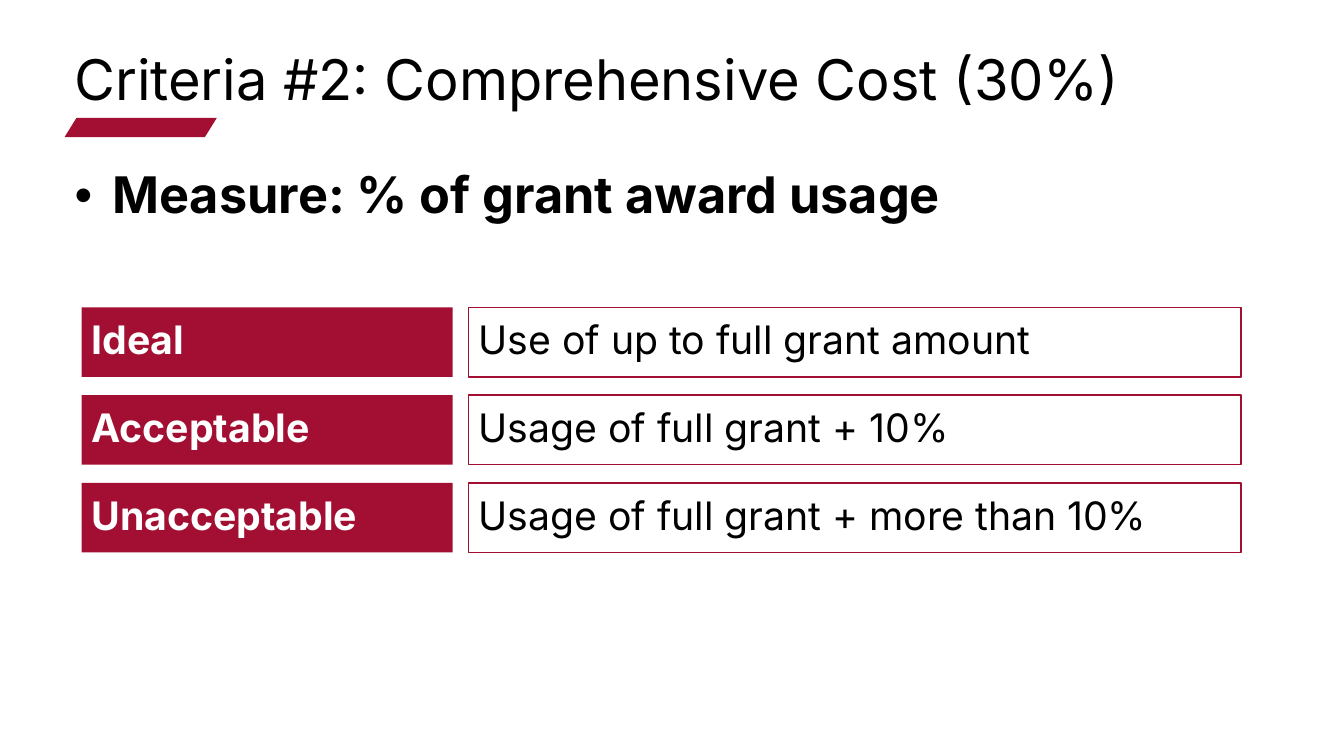
import pptx
import pptx.dml.color
import pptx.enum.shapes
import pptx.enum.text
import pptx.oxml
import pptx.oxml.ns
import pptx.util
from dataclasses import dataclass

Inches = pptx.util.Inches
Kind = pptx.enum.shapes.MSO_SHAPE
Anchor = pptx.enum.text.MSO_ANCHOR


@dataclass
class Theme:
    font: str = "Inter"
    red: str = "A30F32"
    white: str = "FFFFFF"
    black: str = "000000"
    title: int = 40
    measure: int = 36
    row: int = 28


class Deck:
    def __init__(self, theme):
        self.theme = theme
        self.show = pptx.Presentation()
        self.show.slide_width = Inches(13.33)
        self.show.slide_height = Inches(7.5)
        self.slide = self.show.slides.add_slide(self.show.slide_layouts[1])

    def color(self, code):
        return pptx.dml.color.RGBColor.from_string(code)

    def apply(self, item, form):
        for name, value in form.items():
            setattr(item, name, value)

    def label(self, shape, text, size, color, bold=False, anchor=Anchor.TOP):
        frame = shape.text_frame
        frame.text = text
        self.apply(frame, {
            "word_wrap": True,
            "auto_size": pptx.enum.text.MSO_AUTO_SIZE.NONE,
            "vertical_anchor": anchor,
            "margin_left": Inches(0.1),
            "margin_right": Inches(0.1),
            "margin_top": Inches(0.05),
            "margin_bottom": Inches(0.05),
        })
        para = frame.paragraphs[0]
        self.apply(para, {
            "alignment": pptx.enum.text.PP_ALIGN.LEFT,
            "line_spacing": 0.9,
            "space_before": pptx.util.Pt(0),
        })
        font = para.runs[0].font
        self.apply(font, {
            "name": self.theme.font,
            "size": pptx.util.Pt(size),
            "bold": bold,
        })
        font.color.rgb = self.color(color)

    def place(self, shape, left, top, width, height):
        self.apply(shape, {
            "left": Inches(left),
            "top": Inches(top),
            "width": Inches(width),
            "height": Inches(height),
        })

    def title(self, text, *box):
        shape = self.slide.shapes.title
        self.place(shape, *box)
        self.label(shape, text, self.theme.title, self.theme.black)

    def body(self, text, *box):
        shape = self.slide.placeholders[1]
        self.place(shape, *box)
        props = shape.text_frame.paragraphs[0]._p.get_or_add_pPr()
        props.set("marL", "0")
        props.set("indent", "0")
        props.append(pptx.oxml.parse_xml(
            f"<a:buNone {pptx.oxml.ns.nsdecls('a')}/>"))
        self.label(shape, text, self.theme.measure, self.theme.black, True)

    def shape(self, kind, fill, line, *box):
        shape = self.slide.shapes.add_shape(kind, *map(Inches, box))
        shape.shadow.inherit = False
        shape.fill.solid()
        shape.fill.fore_color.rgb = self.color(fill)
        if line:
            shape.line.color.rgb = self.color(line)
            shape.line.width = pptx.util.Pt(1)
        else:
            shape.line.fill.background()
        return shape

    def accent(self, *box):
        shape = self.shape(Kind.PARALLELOGRAM, self.theme.red, None, *box)
        shape.adjustments[0] = 0.62

    def row(self, level, text, top):
        theme = self.theme
        head = self.shape(Kind.RECTANGLE, theme.red, None,
                          0.81, top, 3.68, 0.69)
        self.label(head, level, theme.row, theme.white, True, Anchor.MIDDLE)
        cell = self.shape(Kind.RECTANGLE, theme.white, theme.red,
                          4.65, top, 7.66, 0.69)
        self.label(cell, text, theme.row, theme.black, False, Anchor.MIDDLE)


def main():
    deck = Deck(Theme())
    deck.accent(0.64, 1.17, 1.51, 0.19)
    deck.title("Criteria #2: Comprehensive Cost (30%)",
               0.64, 0.47, 12.16, 0.55)
    deck.body("Measure: % of grant award usage", 0.64, 1.64, 12.07, 0.39)
    levels = {
        "Ideal": "Use of up to full grant amount",
        "Acceptable": "Usage of full grant + 10%",
        "Unacceptable": "Usage of full grant + more than 10%",
    }
    for index, (level, text) in enumerate(levels.items()):
        deck.row(level, text, 3.05 + index * 0.87)
    deck.show.save("out.pptx")


if __name__ == "__main__":
    main()
